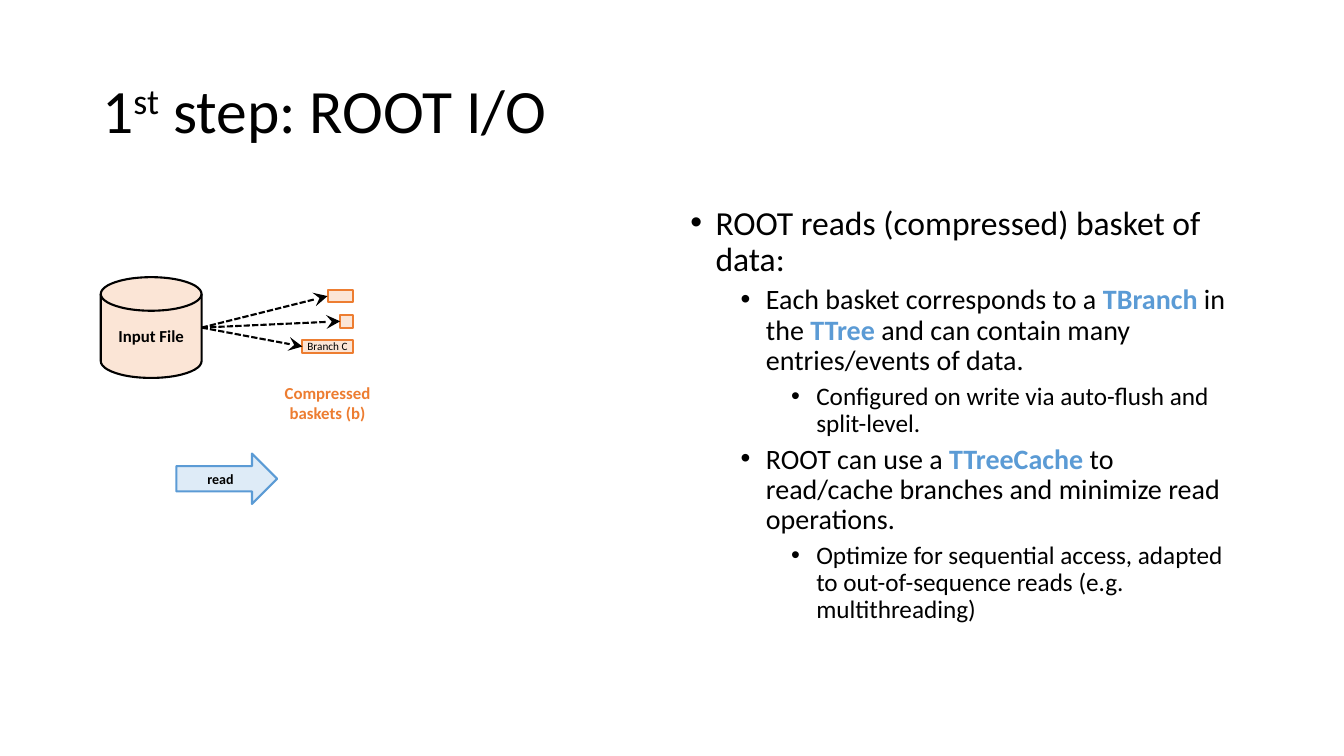
import pptx
import pptx.dml.color
import pptx.enum.dml
import pptx.enum.shapes
import pptx.enum.text
import pptx.oxml.ns
import pptx.oxml.xmlchemy
import pptx.util
from lxml import etree

Pt = pptx.util.Pt
qn = pptx.oxml.ns.qn
SHAPES = pptx.enum.shapes.MSO_SHAPE
ALIGN = pptx.enum.text.PP_ALIGN
ANCHOR = pptx.enum.text.MSO_ANCHOR

COLOURS = {
    "black": "000000",
    "orange": "ED7D31",
    "peach": "FBE5D6",
    "blue": "5B9BD5",
    "pale blue": "DEEBF7",
}


def colour(name):
    return pptx.dml.color.RGBColor.from_string(COLOURS[name])


class SlideBuilder:
    font = "Calibri"
    line_width = 1.5

    def __init__(self, page):
        self.page = page

    def span(self, para, text, size, ink="black", bold=False, raised=False):
        span = para.add_run()
        span.text = text
        span.font.name = self.font
        span.font.size = Pt(size)
        span.font.bold = bold
        span.font.color.rgb = colour(ink)
        if raised:
            span._r.get_or_add_rPr().set("baseline", "30000")

    def frame(self, box, anchor, side_inset=7.2):
        frame = box.text_frame
        frame.word_wrap = True
        frame.vertical_anchor = anchor
        frame.margin_left = frame.margin_right = Pt(side_inset)
        return frame

    def text_box(self, left, top, width, height, anchor=ANCHOR.TOP, side_inset=7.2):
        box = self.page.shapes.add_textbox(Pt(left), Pt(top), Pt(width), Pt(height))
        return self.frame(box, anchor, side_inset)

    def shape(self, kind, left, top, width, height, fill, line):
        shape = self.page.shapes.add_shape(kind, Pt(left), Pt(top), Pt(width), Pt(height))
        shape.shadow.inherit = False
        shape.fill.solid()
        shape.fill.fore_color.rgb = colour(fill)
        shape.line.color.rgb = colour(line)
        shape.line.width = Pt(self.line_width)
        return shape

    def label(self, shape, text, size, bold=True, side_inset=7.2):
        para = self.frame(shape, ANCHOR.MIDDLE, side_inset).paragraphs[0]
        para.alignment = ALIGN.CENTER
        self.span(para, text, size, bold=bold)

    def bullet(self, para, level, size, space_before, spans):
        """Fill a bulleted paragraph from (text, is_keyword) pairs."""
        para.level = level
        para.line_spacing = 0.9
        para.space_before = Pt(space_before)
        properties = para._p.get_or_add_pPr()
        properties.set("marL", str(Pt(18 + 36 * level)))
        properties.set("indent", str(Pt(-18)))
        etree.SubElement(properties, qn("a:buFont"), typeface="Arial")
        etree.SubElement(properties, qn("a:buChar"), char="•")
        for text, keyword in spans:
            self.span(para, text, size, "blue" if keyword else "black", keyword)

    def dashed_arrow(self, left, top, target):
        """Run from a point to the middle of the target's left side."""
        arrow = self.page.shapes.add_connector(
            pptx.enum.shapes.MSO_CONNECTOR.STRAIGHT, Pt(left), Pt(top), Pt(left), Pt(top))
        arrow.end_connect(target, 1)
        arrow.line.color.rgb = colour("black")
        arrow.line.width = Pt(self.line_width)
        arrow.line.dash_style = pptx.enum.dml.MSO_LINE.SQUARE_DOT
        properties = arrow.element.spPr
        etree.SubElement(properties.find(qn("a:ln")), qn("a:tailEnd"),
                         type="stealth", w="lg", len="lg")
        etree.SubElement(properties, qn("a:effectLst"))


BULLETS = [
    (0, [("ROOT reads (compressed) basket of data:", False)]),
    (1, [("Each basket corresponds to a ", False), ("TBranch", True),
         (" in the ", False), ("TTree", True),
         (" and can contain many entries/events of data.", False)]),
    (2, [("Configured on write via auto-flush and split-level.", False)]),
    (1, [("ROOT can use a ", False), ("TTreeCache", True),
         (" to read/cache branches and minimize read operations.", False)]),
    (2, [("Optimize for sequential access, adapted to out-of-sequence reads "
          "(e.g. multithreading)", False)]),
]
BULLET_SIZES = [24, 20, 18]
BASKET_WIDTHS = [18, 9, 36]
BASKET_RIGHT = 252


def main():
    deck = pptx.Presentation()
    deck.slide_width, deck.slide_height = Pt(960), Pt(540)
    builder = SlideBuilder(deck.slides.add_slide(deck.slide_layouts[6]))

    title = builder.text_box(66, 28.75, 828, 104.4, ANCHOR.MIDDLE).paragraphs[0]
    title.line_spacing = 0.9
    builder.span(title, "1", 44)
    builder.span(title, "st", 44, raised=True)
    builder.span(title, " step: ROOT I/O", 44)

    body = builder.text_box(486, 143.75, 408, 342.6)
    for index, (level, spans) in enumerate(BULLETS):
        para = body.add_paragraph() if index else body.paragraphs[0]
        builder.bullet(para, level, BULLET_SIZES[level], 5 if level else 10, spans)

    baskets = [
        builder.shape(SHAPES.RECTANGLE, BASKET_RIGHT - width, 207 + 18 * row, width, 9,
                      "peach", "orange")
        for row, width in enumerate(BASKET_WIDTHS)
    ]
    builder.label(baskets[-1], "Branch C", 8, bold=False, side_inset=0)

    caption = builder.text_box(198, 270, 72, 36, side_inset=0).paragraphs[0]
    caption.alignment = ALIGN.CENTER
    builder.span(caption, "Compressed baskets (b)", 12, "orange", bold=True)

    read_arrow = builder.shape(SHAPES.RIGHT_ARROW, 126, 324, 72, 36, "pale blue", "blue")
    builder.label(read_arrow, "read", 10)
    input_file = builder.shape(SHAPES.FLOWCHART_MAGNETIC_DISK, 72, 198, 72, 72,
                               "peach", "black")
    builder.label(input_file, "Input File", 12)

    for basket in reversed(baskets):
        builder.dashed_arrow(144, 234, basket)

    deck.save("out.pptx")


if __name__ == "__main__":
    main()
